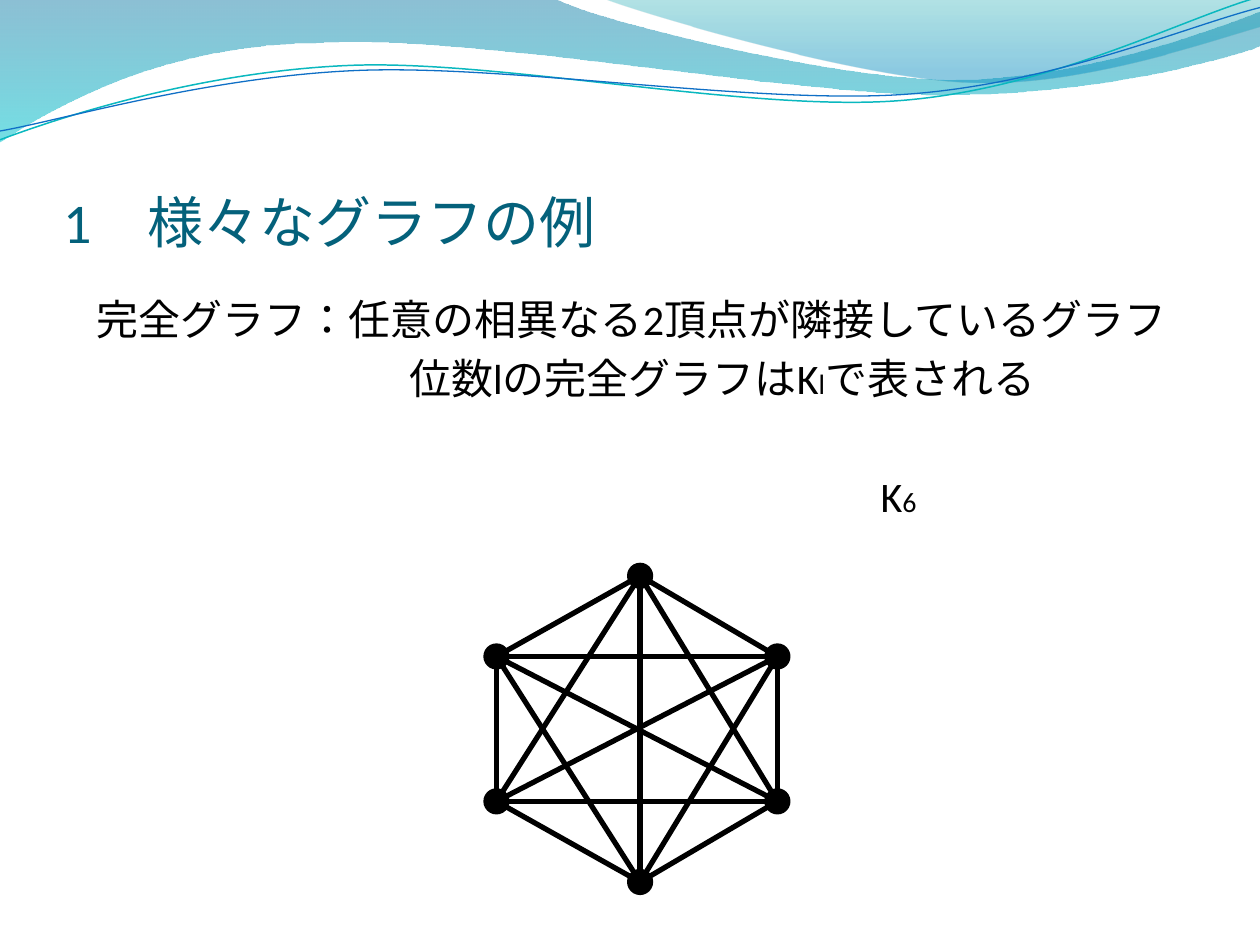
"""Builds a slide on complete graphs, with the K6 graph drawn below a wave header."""
from itertools import combinations

from lxml import etree
from pptx import Presentation
from pptx.dml.color import RGBColor
from pptx.enum.lang import MSO_LANGUAGE_ID
from pptx.enum.shapes import MSO_CONNECTOR, MSO_SHAPE
from pptx.enum.text import MSO_ANCHOR, PP_ALIGN
from pptx.oxml.ns import qn
from pptx.util import Emu, Pt

LINE, OVAL = MSO_CONNECTOR.STRAIGHT, MSO_SHAPE.OVAL
BOTTOM, TOP, LEFT = MSO_ANCHOR.BOTTOM, MSO_ANCHOR.TOP, PP_ALIGN.LEFT
JAPANESE = MSO_LANGUAGE_ID.JAPANESE
PX = 9144
THEME = {
    "font": "Calibri", "title": "04617B", "ink": "000000",
    "title_size": 32, "body_size": 24, "sub_size": 16,
    "edge": 3, "dot_line": 2,
}


def add_run(p, text, size, color):
    r = p.add_run()
    r.text = text
    for name, value in {"name": THEME["font"], "size": Pt(size), "bold": False,
                        "language_id": JAPANESE}.items():
        setattr(r.font, name, value)
    r.font.color.rgb = RGBColor.from_string(color)


def add_wave(shapes, start, parts, closed):
    points = [part[i:i + 2] for part in parts for i in range(0, len(part), 2)]
    builder = shapes.build_freeform(*start, scale=PX)
    builder.add_line_segments(points, close=closed)
    sp = builder.convert_to_shape()
    sp.shadow.inherit = False
    nodes = iter(list(sp._element.spPr.iter(qn("a:lnTo"))))
    for part in parts:
        group = [next(nodes) for _ in range(len(part) // 2)]
        if len(group) == 3:
            curve = etree.Element(qn("a:cubicBezTo"))
            group[0].addprevious(curve)
            for node in group:
                curve.append(node[0])
                node.getparent().remove(node)
    return sp


prs = Presentation()
prs.slide_width, prs.slide_height = Emu(1000 * PX), Emu(750 * PX)
s = prs.slides.add_slide(prs.slide_layouts[5])

bands = [
    ((0, -1), [(440, -1), (476, 17, 664, 63, 758, 63), (853, 63, 958, 26, 1000, 9),
               (1001, 36), (983, 44, 870, 76, 746, 75), (622, 75, 382, 28, 257, 34),
               (129, 35, 46, 83, -1, 113)],
     [(0, "0074A1", 45), (1, "00C6CF", 55)]),
    ((479, -1), [(509, 11, 682, 62, 769, 65), (856, 69, 961, 32, 1000, 21), (1000, 0)],
     [(0, "00A1A9", 30), (0.8, "008BBF", 45)]),
]
for start, parts, stops in bands:
    sp = add_wave(s.shapes, start, parts, True)
    sp.line.fill.background()
    sp.fill.gradient()
    sp.fill.gradient_angle = 270
    for stop, (position, color, opacity) in zip(sp.fill.gradient_stops, stops):
        stop.position = position
        stop.color.rgb = RGBColor.from_string(color)
    for node, (_, _, opacity) in zip(list(sp._element.spPr.iter(qn("a:srgbClr"))), stops):
        etree.SubElement(node, qn("a:alpha"), val=str(opacity * 1000))

strands = [
    ((0, 111), [(48, 93, 158, 57, 277, 52), (395, 47, 593, 89, 713, 80),
                (833, 71, 938, 15, 998, -2)], "0AB8BF", 0.85),
    ((0, 104), [(47, 96, 164, 61, 283, 56), (403, 51, 597, 83, 717, 75),
                (836, 67, 941, 21, 1000, 6)], "0F6FC6", 0.75),
]
for start, parts, color, width in strands:
    sp = add_wave(s.shapes, start, parts, False)
    sp.fill.background()
    sp.line.color.rgb = RGBColor.from_string(color)
    sp.line.width = Pt(width)

title = s.shapes.title
for name, value in {"left": 50, "top": 77, "width": 900, "height": 125}.items():
    setattr(title, name, Emu(value * PX))
tf = title.text_frame
for name, value in {"margin_left": 0, "margin_top": Emu(5 * PX), "margin_right": 0,
                    "margin_bottom": 0, "vertical_anchor": BOTTOM, "word_wrap": True}.items():
    setattr(tf, name, value)
tf.paragraphs[0].alignment = LEFT
add_run(tf.paragraphs[0], "1　様々なグラフの例", THEME["title_size"], THEME["title"])

body, sub = THEME["body_size"], THEME["sub_size"]
lines = [
    (0, 4.8, [("完全グラフ：任意の相異なる2頂点が隣接しているグラフ", body)]),
    (248, 4.8, [("位数lの完全グラフはK", body), ("l", sub), ("で表される", body)]),
    (622, 39, [("K", body), ("6", sub)]),
]
tf = s.shapes.add_textbox(*(Emu(v * PX) for v in (67, 228, 933, 480))).text_frame
tf.word_wrap = True
tf.vertical_anchor = TOP
for i, (indent, before, runs) in enumerate(lines):
    p = tf.add_paragraph() if i else tf.paragraphs[0]
    p.alignment = LEFT
    p.space_before = Pt(before)
    p._p.get_or_add_pPr().set("marL", str(indent * PX))
    for text, size in runs:
        add_run(p, text, size, THEME["ink"])

ink = RGBColor.from_string(THEME["ink"])
vertices = [(508, 457), (617, 521), (617, 636), (508, 700), (394, 636), (394, 521)]
for start, end in combinations(vertices, 2):
    sp = s.shapes.add_connector(LINE, *(Emu(v * PX) for v in start + end))
    sp.line.color.rgb = ink
    sp.line.width = Pt(THEME["edge"])
    etree.SubElement(sp._element.spPr, qn("a:effectLst"))

RADIUS = 9
for x, y in vertices:
    box = (x - RADIUS, y - RADIUS, 2 * RADIUS, 2 * RADIUS)
    sp = s.shapes.add_shape(OVAL, *(Emu(v * PX) for v in box))
    sp.shadow.inherit = False
    sp.fill.solid()
    sp.fill.fore_color.rgb = ink
    sp.line.color.rgb = ink
    sp.line.width = Pt(THEME["dot_line"])

prs.save("out.pptx")
